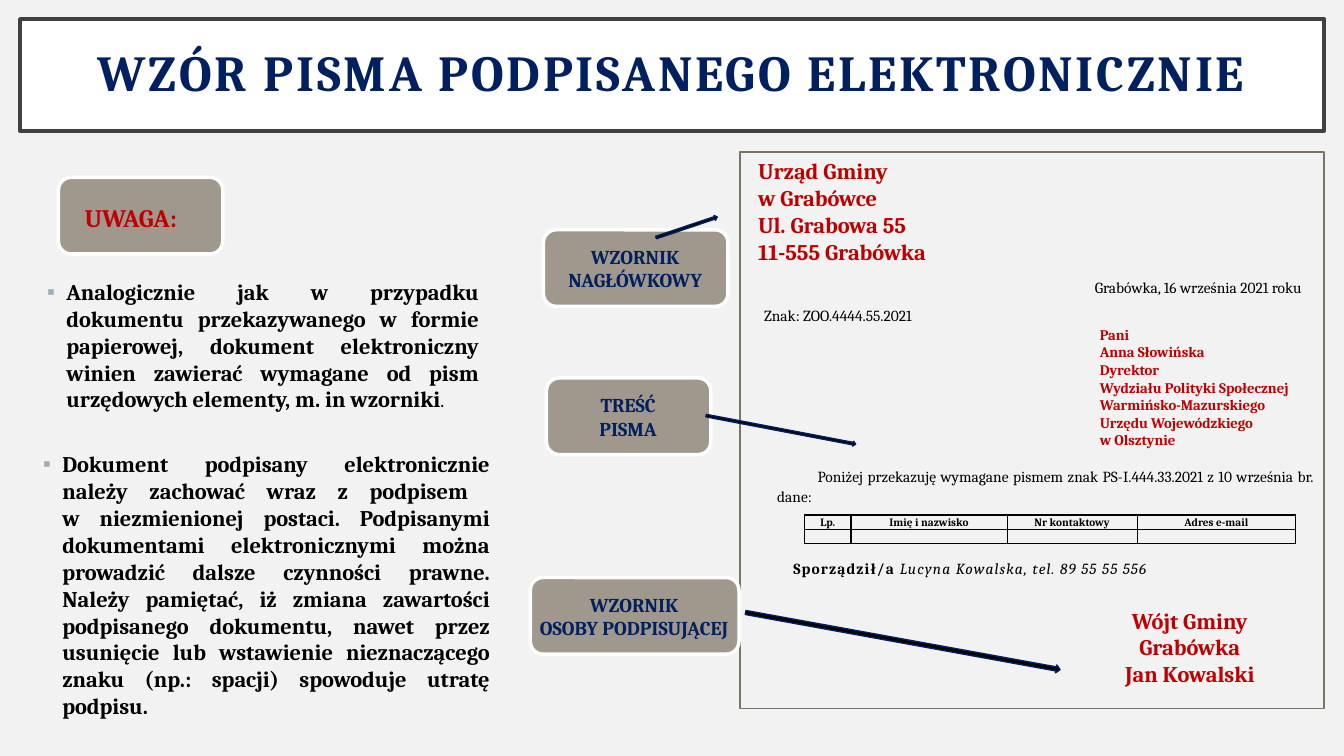
from lxml import etree
from pptx import Presentation
from pptx import util as u
from pptx.dml.color import RGBColor
from pptx.enum import shapes, text
from pptx.oxml.ns import qn

NAVY, RED, BLACK, WHITE = "002060", "C00000", "000000", "FFFFFF"
TAUPE, PAPER = "A0988C", "F2F2F2"
LEFT, CENTER = text.PP_ALIGN.LEFT, text.PP_ALIGN.CENTER
RIGHT, JUSTIFY = text.PP_ALIGN.RIGHT, text.PP_ALIGN.JUSTIFY
AUTO = shapes.MSO_SHAPE


def color(value):
    return RGBColor.from_string(value)


def add_child(parent, tag, **attributes):
    return etree.SubElement(parent, qn(tag), attributes)


def style_span(span, size, shade=BLACK, bold=False, italic=False, spacing=0):
    font = span.font
    font.name, font.size = "Cambria", u.Pt(size)
    font.bold, font.italic = bold, italic
    font.color.rgb = color(shade)
    if spacing:
        font._element.set("spc", str(round(spacing * 100)))


def write(para, content, size, align=LEFT, line=None, after=0, **style):
    para.text = content
    para.alignment = align
    para.space_after = u.Pt(after)
    if line:
        para.line_spacing = line
    for span in para.runs:
        style_span(span, size, **style)


def indent(para, left, first):
    properties = para._p.get_or_add_pPr()
    properties.set("marL", str(u.Inches(left)))
    properties.set("indent", str(u.Inches(first)))
    return properties


def add_bullet(para):
    properties = indent(para, 0.19, -0.19)
    add_child(add_child(properties, "a:buClr"), "a:srgbClr", val="9BAFB5")
    add_child(properties, "a:buFont", typeface="Arial")
    add_child(properties, "a:buChar", char="▪")


def add_text(page, box, lines, size, **style):
    frame = page.shapes.add_textbox(*map(u.Inches, box)).text_frame
    frame.word_wrap = True
    frame.auto_size = text.MSO_AUTO_SIZE.SHAPE_TO_FIT_TEXT
    for number, content in enumerate(lines):
        para = frame.add_paragraph() if number else frame.paragraphs[0]
        write(para, content, size, **style)
    return frame


def add_block(page, kind, box, fill, line, width, rotation=0):
    block = page.shapes.add_shape(kind, *map(u.Inches, box))
    block.shadow.inherit = False
    block.fill.solid()
    block.fill.fore_color.rgb = color(fill)
    block.line.color.rgb = color(line)
    block.line.width = u.Pt(width)
    block.rotation = rotation
    return block


def add_tile(page, left, top, width):
    add_block(page, AUTO.ROUNDED_RECTANGLE, (left, top, width, 0.76), TAUPE, WHITE, 2.5)


def add_title(page, box):
    frame = add_block(page, AUTO.RECTANGLE, box, WHITE, "404040", 3).text_frame
    frame.word_wrap = True
    frame.vertical_anchor = text.MSO_ANCHOR.MIDDLE
    frame.margin_left = frame.margin_right = u.Inches(0.3)
    frame.margin_top = frame.margin_bottom = u.Inches(0.2)
    write(frame.paragraphs[0], "WZÓR PISMA PODPISANEGO ELEKTRONICZNIE", 36,
          align=CENTER, line=0.9, shade=NAVY, bold=True, spacing=2)


def add_advice(page, left, top):
    add_tile(page, left + 0.25, top, 1.63)
    add_text(page, (left + 0.41, top + 0.2, 1.42, 0.4), ["UWAGA:"], 18, shade=RED, bold=True)

    elements = add_text(
        page, (left + 0.04, top + 0.95, 4.48, 1.45),
        ["Analogicznie jak w przypadku dokumentu przekazywanego w formie papierowej, "
         "dokument elektroniczny winien zawierać wymagane od pism urzędowych elementy, "
         "m. in wzorniki"], 16, align=JUSTIFY, after=4.5, bold=True).paragraphs[0]
    elements.space_before = u.Pt(9)
    stop = elements.add_run()
    stop.text = "."
    style_span(stop, 10.5, bold=True)
    add_bullet(elements)

    storage = add_text(
        page, (left, top + 2.66, 4.63, 2.79),
        ["Dokument podpisany elektronicznie należy zachować wraz z podpisem \n"
         "w niezmienionej postaci. Podpisanymi dokumentami elektronicznymi można "
         "prowadzić dalsze czynności prawne. Należy pamiętać, iż zmiana zawartości "
         "podpisanego dokumentu, nawet przez usunięcie lub wstawienie nieznaczącego "
         "znaku (np.: spacji) spowoduje utratę podpisu."], 16, align=JUSTIFY, bold=True)
    add_bullet(storage.paragraphs[0])


def add_labels(page, left, top):
    labels = [
        ("WZORNIK\nNAGŁÓWKOWY", 0.25, 0, 1.83),
        ("TREŚĆ\nPISMA", 0.28, 1.47, 1.63),
        ("WZORNIK\nOSOBY PODPISUJĄCEJ", 0.12, 3.45, 2.07),
    ]
    for content, shift, drop, width in labels:
        add_tile(page, left + shift, top + drop, width)
        middle = left + shift + width / 2
        add_text(page, (middle - 1.16, top + drop + 0.1, 2.31, 0.57), [content], 14,
                 align=CENTER, shade=NAVY, bold=True)


def add_contacts(page, left, top):
    headings = ["Lp.", "Imię i nazwisko", "Nr kontaktowy", "Adres e-mail"]
    widths = [0.46, 1.55, 1.29, 1.57]
    frame = page.shapes.add_table(2, 4, *map(u.Inches, (left, top, sum(widths), 0.28)))
    table = frame.table
    table.first_row = table.horz_banding = False
    for row in table.rows:
        row.height = u.Inches(0.14)
    for column, width in zip(table.columns, widths):
        column.width = u.Inches(width)
    for cell, heading in zip(table.iter_cells(), headings + [""] * 4):
        cell.margin_left = cell.margin_right = u.Inches(0.06)
        cell.margin_top = cell.margin_bottom = 0
        para = cell.text_frame.paragraphs[0]
        if heading:
            write(para, heading, 8, align=CENTER, line=1.07, bold=True)
        else:
            add_child(para._p, "a:endParaRPr", sz="800")
        properties = cell._tc.get_or_add_tcPr()
        for side in ("a:lnL", "a:lnR", "a:lnT", "a:lnB"):
            border = add_child(properties, side, w=str(u.Pt(1)))
            add_child(add_child(border, "a:solidFill"), "a:srgbClr", val=BLACK)
        cell.fill.background()


def add_letter(page, left, top):
    add_block(page, AUTO.RECTANGLE, (left, top, 5.79, 5.52), PAPER, "7B7366", 1)
    add_text(page, (left + 0.08, top, 2.14, 1.31),
             ["Urząd Gminy", "w Grabówce", "Ul. Grabowa 55", "11-555 Grabówka"],
             16, shade=RED, bold=True)

    body = dict(line=1.07, after=6)
    reference = add_text(page, (left + 0.11, top + 1.19, 5.56, 0.57),
                         ["Grabówka, 16 września 2021 roku", "Znak: ZOO.4444.55.2021"],
                         11, **body)
    reference.paragraphs[0].alignment = RIGHT
    indent(reference.paragraphs[1], 0.03, 0)

    add_text(page, (left + 3.47, top + 1.67, 2.15, 1.34),
             ["Pani", "Anna Słowińska", "Dyrektor", "Wydziału Polityki Społecznej",
              "Warmińsko-Mazurskiego\nUrzędu Wojewódzkiego\nw Olsztynie"],
             10.5, shade=RED, bold=True)

    request = add_text(page, (left + 0.27, top + 3.06, 5.52, 0.49),
                       ["Poniżej przekazuję wymagane pismem znak PS-I.444.33.2021 "
                        "z 10 września br. dane:"], 11, align=JUSTIFY, **body)
    indent(request.paragraphs[0], 0, 0.4)

    add_contacts(page, left + 0.64, top + 3.6)

    author = add_text(page, (left + 0.43, top + 3.97, 4.12, 0.29), ["Sporządził/a "],
                      11, bold=True, spacing=0.8, **body).paragraphs[0]
    details = author.add_run()
    details.text = "Lucyna Kowalska, tel. 89 55 55 556"
    style_span(details, 11, italic=True, spacing=0.8)

    add_text(page, (left + 3.25, top + 4.46, 2.42, 0.91),
             ["Wójt Gminy\nGrabówka", "Jan Kowalski"], 16, align=CENTER, shade=RED, bold=True)


def add_arrows(page, left, top):
    arrows = [
        (0, 0, 0.64, 0.05, 341.4),
        (0.5, 2.01, 1.51, 0.05, 10.8),
        (0.88, 4.09, 3.17, 0.08, 10.3),
    ]
    for shift, drop, width, height, rotation in arrows:
        add_block(page, AUTO.RIGHT_ARROW, (left + shift, top + drop, width, height),
                  BLACK, NAVY, 1, rotation)


def main():
    deck = Presentation()
    deck.slide_width, deck.slide_height = u.Inches(13.33), u.Inches(7.5)
    page = deck.slides.add_slide(deck.slide_layouts[6])
    page.background.fill.solid()
    page.background.fill.fore_color.rgb = color(PAPER)
    add_title(page, (0.2, 0.19, 12.93, 1.11))
    add_advice(page, 0.33, 1.76)
    add_letter(page, 7.34, 1.51)
    add_labels(page, 5.14, 2.28)
    add_arrows(page, 6.49, 2.23)
    deck.save("out.pptx")


if __name__ == "__main__":
    main()
